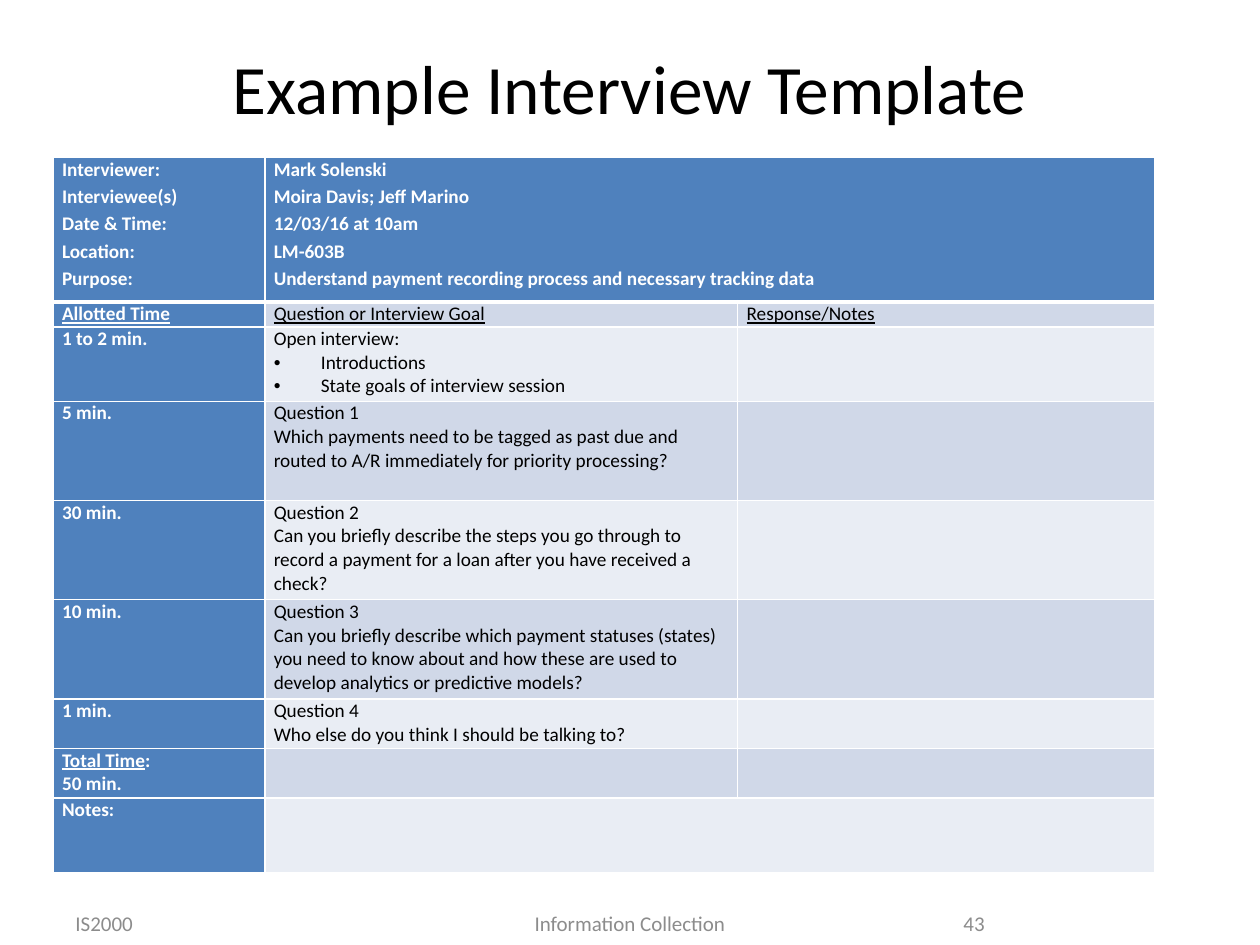
from lxml import etree
from pptx import Presentation, util as u
from pptx.dml.color import RGBColor
from pptx.enum import text
from pptx.oxml import ns

BLACK = RGBColor(0x00, 0x00, 0x00)
WHITE = RGBColor(0xFF, 0xFF, 0xFF)
GREY = RGBColor(0x8C, 0x8C, 0x8C)
BLUE = RGBColor(0x4F, 0x81, 0xBD)
DARK_BAND = RGBColor(0xD0, 0xD8, 0xE8)
LIGHT_BAND = RGBColor(0xE9, 0xED, 0xF4)

ALIGN = text.PP_ALIGN
COLUMN_WIDTHS = (4.27, 9.53, 8.41)

# Row height and the lines of each cell; text between underscores is underlined.
AGENDA = [
    (2.91, ["Interviewer:", "Interviewee(s)", "Date & Time:", "Location:", "Purpose:"],
     ["Mark Solenski", "Moira Davis; Jeff Marino", "12/03/16 at 10am", "LM-603B",
      "Understand payment recording process and necessary tracking data"], []),
    (0.5, ["_Allotted Time_"], ["_Question or Interview Goal_"], ["_Response/Notes_"]),
    (1.5, ["1 to 2 min."],
     ["Open interview:", "•Introductions", "•State goals of interview session"], []),
    (2, ["5 min."],
     ["Question 1", "Which payments need to be tagged as past due and routed to A/R "
      "immediately for priority processing?"], []),
    (2, ["30 min."],
     ["Question 2", "Can you briefly describe the steps you go through to record a "
      "payment for a loan after you have received a check?"], []),
    (2, ["10 min."],
     ["Question 3", "Can you briefly describe which payment statuses (states) you need "
      "to know about and how these are used to develop analytics or predictive models?"], []),
    (1, ["1 min."], ["Question 4", "Who else do you think I should be talking to?"], []),
    (1, ["_Total Time_:", "50 min."], [], []),
    (1.5, ["Notes:"], [], []),
]


def set_font(font, color, **formats):
    font.color.rgb = color
    for name, value in {"name": "Calibri", **formats}.items():
        setattr(font, name, value)


def add_label(slide, box, wording, size, color, align):
    label = slide.shapes.add_textbox(*map(u.Cm, box))
    frame = label.text_frame
    frame.word_wrap = True
    frame.vertical_anchor = text.MSO_ANCHOR.MIDDLE
    paragraph = frame.paragraphs[0]
    paragraph.alignment = align
    run = paragraph.add_run()
    run.text = wording
    set_font(run.font, color, size=u.Pt(size))


def add_bullet(paragraph):
    properties = paragraph._p.get_or_add_pPr()
    indent = u.Cm(0.95)
    properties.set("marL", str(indent))
    properties.set("indent", str(-indent))
    etree.SubElement(properties, ns.qn("a:buFont"), typeface="Arial")
    etree.SubElement(properties, ns.qn("a:buChar"), char="•")


def set_borders(cell, top, bottom):
    """Draw white borders; top and bottom are widths in points."""
    properties = cell._tc.get_or_add_tcPr()
    widths = {"a:lnL": 1, "a:lnR": 1, "a:lnT": top, "a:lnB": bottom}
    for position, (side, width) in enumerate(widths.items()):
        line = etree.Element(ns.qn(side), w=str(u.Pt(width)))
        fill = etree.SubElement(line, ns.qn("a:solidFill"))
        etree.SubElement(fill, ns.qn("a:srgbClr"), val=str(WHITE))
        properties.insert(position, line)


def write_cell(cell, lines, color, bold, align, space):
    for index, line in enumerate(lines):
        frame = cell.text_frame
        paragraph = frame.add_paragraph() if index else frame.paragraphs[0]
        paragraph.alignment = align
        if index:
            paragraph.space_before = u.Pt(space)
        if line.startswith("•"):
            add_bullet(paragraph)
        for part, piece in enumerate(line.lstrip("•").split("_")):
            if piece:
                run = paragraph.add_run()
                run.text = piece
                set_font(run.font, color, size=u.Pt(11), bold=bold, underline=part % 2 == 1)


def add_agenda(slide, left, top):
    height = sum(row[0] for row in AGENDA)
    box = map(u.Cm, (left, top, sum(COLUMN_WIDTHS), height))
    table = slide.shapes.add_table(len(AGENDA), len(COLUMN_WIDTHS), *box).table
    for column, width in zip(table.columns, COLUMN_WIDTHS):
        column.width = u.Cm(width)
    margins = {"margin_left": 0.18, "margin_right": 0.18, "margin_top": 0, "margin_bottom": 0}
    for r, (row_height, *contents) in enumerate(AGENDA):
        table.rows[r].height = u.Cm(row_height)
        for c, lines in enumerate(contents):
            cell = table.cell(r, c)
            for name, value in margins.items():
                setattr(cell, name, u.Cm(value))
            heading = r == 0 or c == 0
            cell.fill.solid()
            cell.fill.fore_color.rgb = BLUE if heading else (LIGHT_BAND, DARK_BAND)[r % 2]
            set_borders(cell, top=3 if r == 1 else 1, bottom=3 if r == 0 else 1)
            write_cell(cell, lines, WHITE if heading else BLACK, heading,
                       ALIGN.JUSTIFY if r == c == 0 else ALIGN.LEFT, 2 if r == 0 else 0)
    for r in (0, len(AGENDA) - 1):
        table.cell(r, 1).merge(table.cell(r, 2))


def add_footer(slide, top, height):
    for left, width, wording, align in (
        (1.27, 5.92, "IS2000", ALIGN.LEFT),
        (7.8, 9.8, "Information Collection", ALIGN.CENTER),
        (18.2, 1.9, "43", ALIGN.RIGHT),
    ):
        add_label(slide, (left, top, width, height), wording, 12, GREY, align)


def main():
    deck = Presentation()
    deck.slide_width, deck.slide_height = u.Cm(25.4), u.Cm(19.05)
    slide = deck.slides.add_slide(deck.slide_layouts[6])
    add_label(slide, (1.27, 0.76, 22.86, 1.98), "Example Interview Template",
              39.6, BLACK, ALIGN.CENTER)
    add_agenda(slide, left=1.07, top=3.18)
    add_footer(slide, top=18.21, height=0.8)
    deck.save("out.pptx")


if __name__ == "__main__":
    main()
